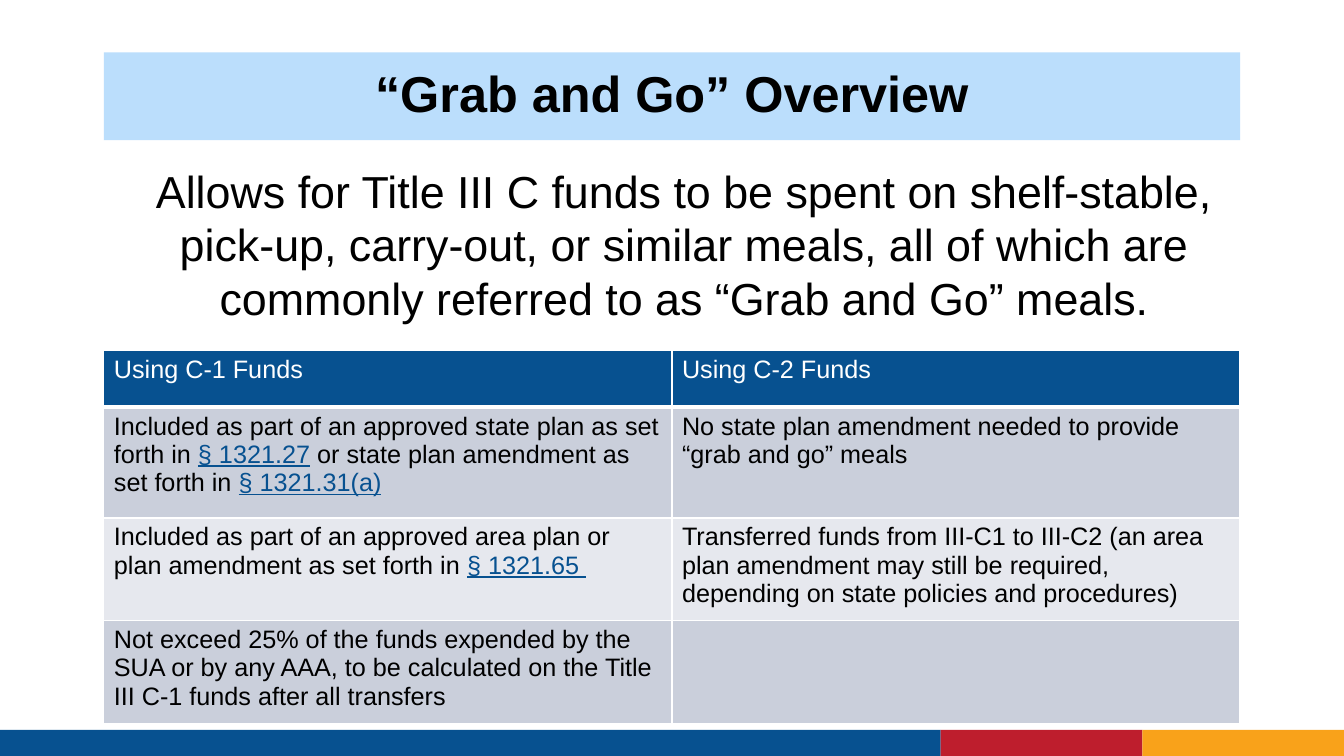
import pptx
import pptx.util
import pptx.dml.color
import pptx.enum.shapes
import pptx.enum.text
import pptx.oxml
import pptx.oxml.ns

Inches = pptx.util.Inches
Pt = pptx.util.Pt
RGBColor = pptx.dml.color.RGBColor
ALIGN = pptx.enum.text.PP_ALIGN
ANCHOR = pptx.enum.text.MSO_ANCHOR

BLACK = RGBColor(0, 0, 0)
WHITE = RGBColor(255, 255, 255)
BLUE = RGBColor(0x07, 0x51, 0x90)
RED = RGBColor(0xBE, 0x1E, 0x2D)
GOLD = RGBColor(0xF9, 0xA2, 0x1A)
SKY = RGBColor(0xBB, 0xDE, 0xFC)
GREY = RGBColor(0xCA, 0xCF, 0xDB)
PALE = RGBColor(0xE6, 0xE8, 0xEE)

LEFT, WIDTH = 1.03, 11.27
HEIGHTS = [0.56, 1.1, 1.02, 1.02]
FILLS = [BLUE, GREY, PALE, GREY]

# Each cell is a list of runs; every second run is a cited section.
ROWS = [
    [["Using C-1 Funds"], ["Using C-2 Funds"]],
    [["Included as part of an approved state plan as set forth in ",
      "§ 1321.27", " or state plan amendment as set forth in ",
      "§ 1321.31(a)"],
     ["No state plan amendment needed to provide “grab and go” meals"]],
    [["Included as part of an approved area plan or plan amendment "
      "as set forth in ", "§ 1321.65 "],
     ["Transferred funds from III-C1 to III-C2 (an area plan amendment may "
      "still be required, depending on state policies and procedures)"]],
    [["Not exceed 25% of the funds expended by the SUA or by any AAA, to be "
      "calculated on the Title III C-1 funds after all transfers"], []],
]


def write(para, text, size=18, color=BLACK, bold=False, line=False):
    """Add one formatted run to a paragraph."""
    run = para.add_run()
    run.text = text
    font = run.font
    font.name = "Arial"
    font.size = Pt(size)
    font.bold = bold
    font.underline = line
    font.color.rgb = color


def paint(item, color):
    item.fill.solid()
    item.fill.fore_color.rgb = color


def place(shape, left, top, width, height):
    shape.left, shape.top = Inches(left), Inches(top)
    shape.width, shape.height = Inches(width), Inches(height)


def add_bar(slide, left, width, color):
    bar = slide.shapes.add_shape(
        pptx.enum.shapes.MSO_SHAPE.RECTANGLE,
        Inches(left), Inches(7.24), Inches(width), Inches(0.26))
    bar.shadow.inherit = False
    paint(bar, color)
    bar.line.fill.background()


def add_title(slide, text):
    title = slide.shapes.title
    place(title, LEFT, 0.52, WIDTH, 0.87)
    paint(title, SKY)
    title.text_frame.vertical_anchor = ANCHOR.MIDDLE
    para = title.text_frame.paragraphs[0]
    para.alignment = ALIGN.CENTER
    para.line_spacing = 0.9
    write(para, text, size=36, bold=True)


def add_lead(slide, text):
    box = slide.shapes.add_textbox(
        Inches(LEFT), Inches(1.57), Inches(11.52), Inches(1.72))
    frame = box.text_frame
    frame.word_wrap = True
    frame.auto_size = pptx.enum.text.MSO_AUTO_SIZE.SHAPE_TO_FIT_TEXT
    para = frame.paragraphs[0]
    para.alignment = ALIGN.CENTER
    write(para, text, size=32)


def rule(cell, base):
    """Draw white cell borders, the bottom one base points wide."""
    props = cell.fill._xPr
    sides = [("lnL", 1), ("lnR", 1), ("lnT", 1), ("lnB", base)]
    for spot, (side, width) in enumerate(sides):
        props.insert(spot, pptx.oxml.parse_xml(
            f'<a:{side} {pptx.oxml.ns.nsdecls("a")} w="{Pt(width)}">'
            f'<a:solidFill><a:srgbClr val="{WHITE}"/></a:solidFill>'
            f'</a:{side}>'))


def add_grid(slide):
    frame = slide.shapes.add_table(
        len(ROWS), 2, Inches(LEFT), Inches(3.48),
        Inches(WIDTH), Inches(sum(HEIGHTS)))
    table = frame.table
    for row, cells in enumerate(ROWS):
        table.rows[row].height = Inches(HEIGHTS[row])
        head = row == 0
        for col, parts in enumerate(cells):
            cell = table.cell(row, col)
            paint(cell, FILLS[row])
            rule(cell, 3 if head else 1)
            para = cell.text_frame.paragraphs[0]
            for spot, text in enumerate(parts):
                cite = spot % 2 == 1
                color = WHITE if head else BLUE if cite else BLACK
                write(para, text, color=color, line=cite)


def main():
    deck = pptx.Presentation()
    deck.slide_width, deck.slide_height = Inches(13.33), Inches(7.5)
    slide = deck.slides.add_slide(deck.slide_layouts[5])
    for left, width, color in [(0, 9.33, BLUE), (9.33, 2, RED),
                               (11.33, 2, GOLD)]:
        add_bar(slide, left, width, color)
    add_title(slide, "“Grab and Go” Overview")
    add_lead(slide, "Allows for Title III C funds to be spent on "
             "shelf-stable, pick-up, carry-out, or similar meals, all of "
             "which are commonly referred to as “Grab and Go” meals.")
    add_grid(slide)
    deck.save("out.pptx")


if __name__ == "__main__":
    main()
